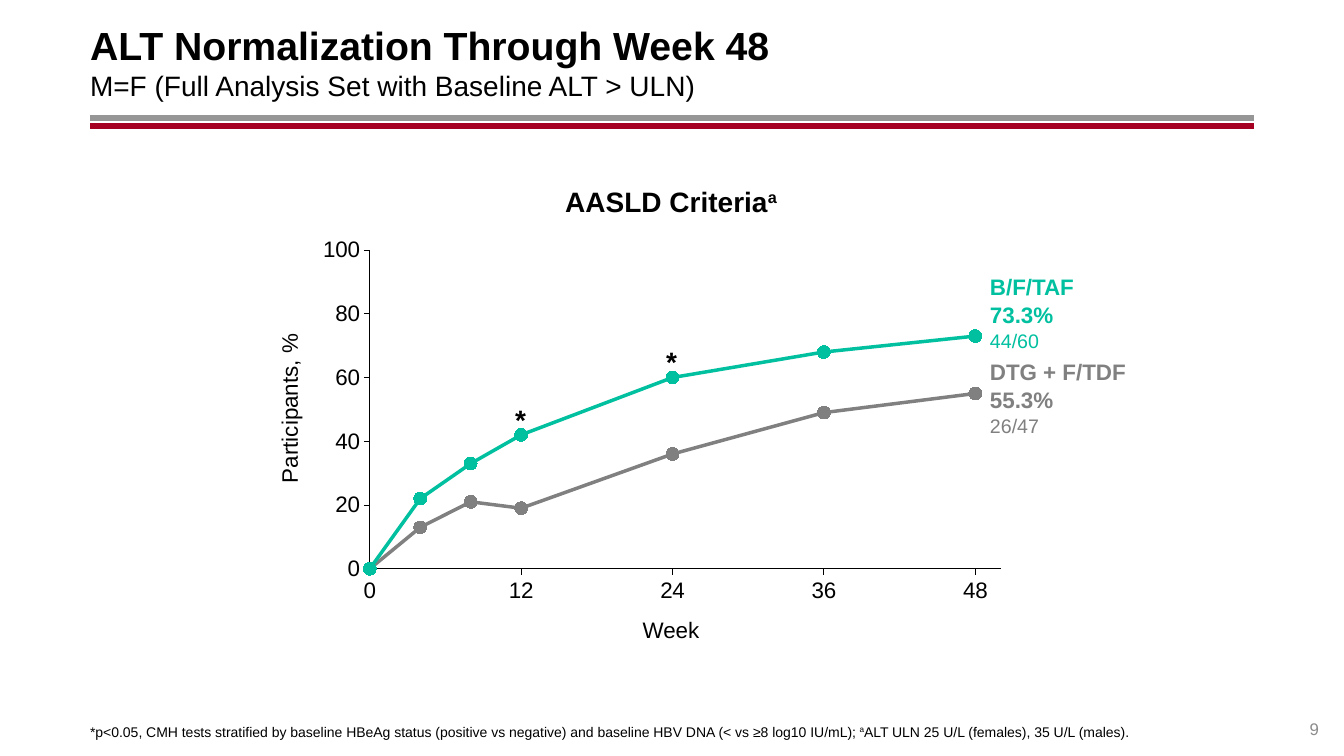
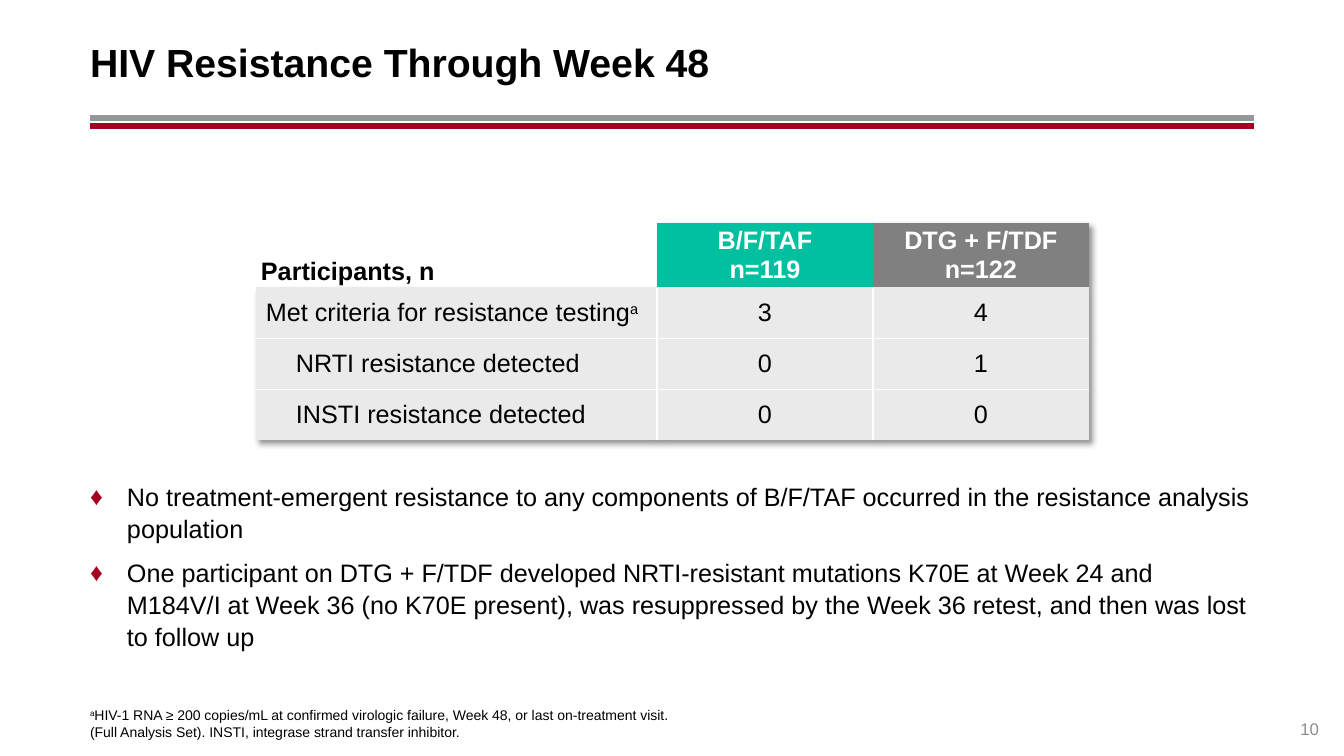
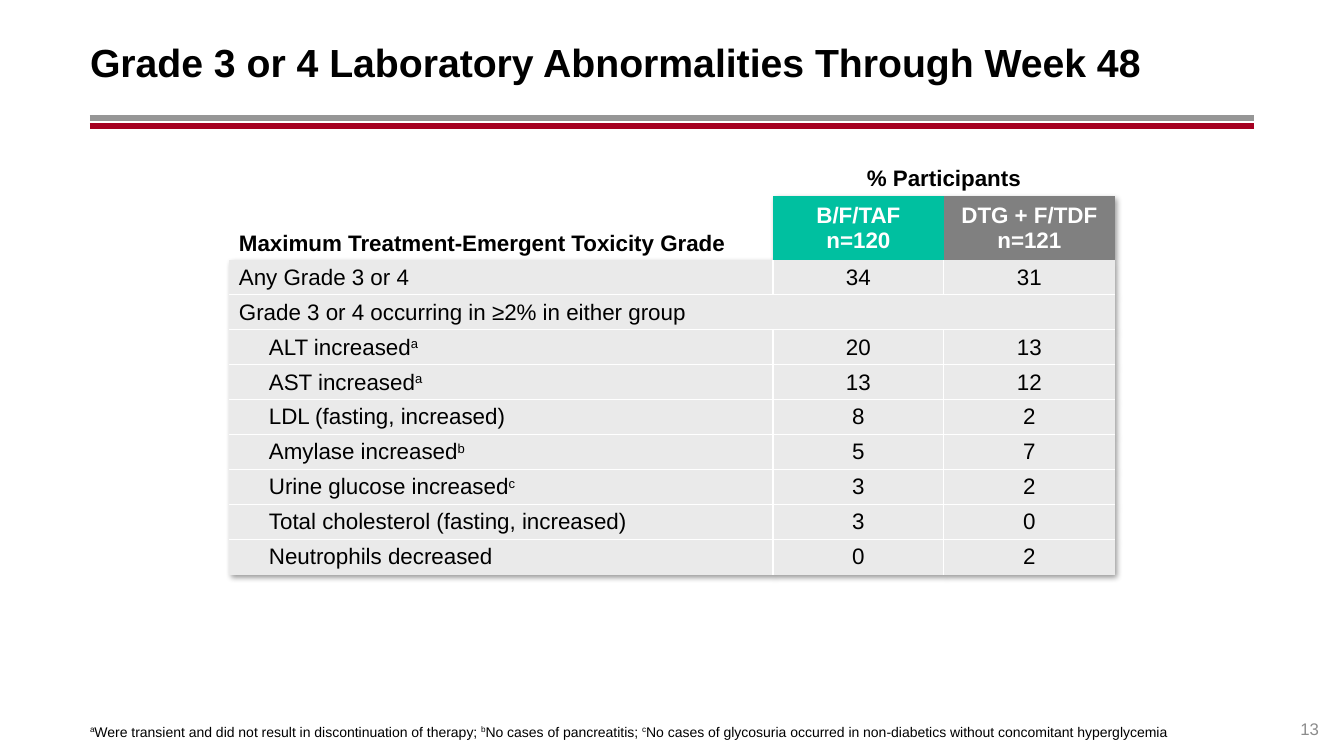
from lxml import etree
from pptx import Presentation
from pptx.chart.data import XyChartData
from pptx.dml.color import RGBColor
from pptx.enum import chart as charts, shapes, text
from pptx.oxml import parse_xml
from pptx.oxml.ns import nsdecls, qn
from pptx.util import Emu, Pt

# Scale, colours and shared places
SLIDE_WIDTH, SLIDE_HEIGHT = 1344, 756
EMU_PER_PX = 12192000 / SLIDE_WIDTH
LEFT, WIDTH = 90, 1164
TITLE_BOX = (LEFT, 18, WIDTH, 87)
FOOTNOTE_BOTTOM = 740

FONT = "Arial"
BLACK = RGBColor(0x00, 0x00, 0x00)
WHITE = RGBColor(0xFF, 0xFF, 0xFF)
RULE_GRAY = RGBColor(0x96, 0x96, 0x96)
CRIMSON = RGBColor(0xA5, 0x00, 0x21)
PAGE_GRAY = RGBColor(0x8C, 0x8C, 0x8C)
TEAL = RGBColor(0x00, 0xC0, 0xA0)
GRAY = RGBColor(0x80, 0x80, 0x80)
CELL_GRAY = RGBColor(0xEA, 0xEA, 0xEA)

ALIGN = text.PP_ALIGN
ANCHOR = text.MSO_ANCHOR


def px(length):
    return Emu(round(length * EMU_PER_PX))


def write(paragraph, content, size, color=BLACK, bold=False, align=ALIGN.LEFT):
    """Fill a paragraph; parts between ^ signs are superscript."""
    paragraph.alignment = align
    for index, part in enumerate(content.split("^")):
        if not part:
            continue
        run = paragraph.add_run()
        run.text = part
        run.font.name, run.font.size = FONT, Pt(size)
        run.font.bold, run.font.color.rgb = bold, color
        if index % 2:
            run.font._element.set("baseline", "30000")


def write_lines(text_frame, lines, **style):
    """Write one paragraph per line; a line is text or (text, own style)."""
    for index, line in enumerate(lines):
        content, own_style = (line, {}) if isinstance(line, str) else line
        paragraph = text_frame.add_paragraph() if index else text_frame.paragraphs[0]
        write(paragraph, content, **{**style, **own_style})


def add_text(slide, box, lines, anchor=ANCHOR.MIDDLE, wrap=True, **style):
    shape = slide.shapes.add_textbox(*map(px, box))
    text_frame = shape.text_frame
    text_frame.margin_left = text_frame.margin_right = 0
    text_frame.margin_top = text_frame.margin_bottom = 0
    text_frame.word_wrap = wrap
    text_frame.vertical_anchor = anchor
    write_lines(text_frame, lines, **style)
    return shape


# Title, double rule, footnote and page number
def add_frame(presentation, title, footnote, number):
    slide = presentation.slides.add_slide(presentation.slide_layouts[6])
    for y, color in ((118, RULE_GRAY), (126, CRIMSON)):
        rule = slide.shapes.add_connector(
            shapes.MSO_CONNECTOR.STRAIGHT, px(LEFT), px(y), px(LEFT + WIDTH), px(y))
        rule.line.color.rgb, rule.line.width = color, Pt(4.25)
        etree.SubElement(rule._element.spPr, qn("a:effectLst"))
    add_text(slide, TITLE_BOX, title, size=28, bold=True)
    height = 17 * len(footnote)
    add_text(slide, (LEFT, FOOTNOTE_BOTTOM - height, WIDTH, height), footnote,
             anchor=ANCHOR.BOTTOM, size=10)
    add_text(slide, (1254, 699, 65, 40), [str(number)], anchor=ANCHOR.BOTTOM,
             size=12, color=PAGE_GRAY, align=ALIGN.RIGHT)
    return slide


# Line chart over weeks
def style_axis(axis, maximum, step):
    axis.minimum_scale, axis.maximum_scale, axis.major_unit = 0, maximum, step
    axis.has_major_gridlines = axis.has_minor_gridlines = False
    axis.major_tick_mark = charts.XL_TICK_MARK.OUTSIDE
    axis.minor_tick_mark = charts.XL_TICK_MARK.NONE
    axis.tick_labels.number_format = "0"
    axis.tick_labels.number_format_is_linked = False
    font = axis.tick_labels.font
    font.name, font.size, font.color.rgb = FONT, Pt(16), BLACK
    axis.format.line.color.rgb, axis.format.line.width = BLACK, Pt(0.75)


def add_week_chart(slide, box, weeks, series_values):
    data = XyChartData()
    for name, values, _ in series_values:
        series = data.add_series(name)
        for week, value in zip(weeks, values):
            series.add_data_point(week, value)
    chart = slide.shapes.add_chart(
        charts.XL_CHART_TYPE.XY_SCATTER_LINES, *map(px, box), data).chart
    chart.has_legend = chart.has_title = False
    chart.font.name, chart.font.size, chart.font.color.rgb = FONT, Pt(10), BLACK
    style_axis(chart.category_axis, 50, 12)
    style_axis(chart.value_axis, 100, 20)
    plot = chart.plots[0]
    plot.vary_by_categories = False
    for series, (_, _, color) in zip(plot.series, series_values):
        series.smooth = False
        series.format.line.color.rgb, series.format.line.width = color, Pt(2.5)
        marker = series.marker
        marker.style, marker.size = charts.XL_MARKER_STYLE.CIRCLE, 9
        marker.format.fill.solid()
        marker.format.fill.fore_color.rgb = color
        marker.format.line.color.rgb = color

    # Fixed inner plot area
    plot_area = chart._chartSpace.chart.plotArea
    for layout in plot_area.findall(qn("c:layout")):
        plot_area.remove(layout)
    places = "".join(f'<c:{key} val="{value}"/>' for key, value in (
        ("layoutTarget", "inner"), ("xMode", "edge"), ("yMode", "edge"),
        ("x", 0.083), ("y", 0.096), ("w", 0.891), ("h", 0.745)))
    plot_area.insert(0, parse_xml(
        f'<c:layout {nsdecls("c")}><c:manualLayout>{places}</c:manualLayout></c:layout>'))


def add_chart_region(slide, box):
    left, top, width, height = box
    weeks = (0, 4, 8, 12, 24, 36, 48)
    add_week_chart(slide, box, weeks, (
        ("B/F/TAF", (0, 22, 33, 42, 60, 68, 73), TEAL),
        ("DTG + F/TDF", (0, 13, 21, 19, 36, 49, 55), GRAY)))

    # Heading, axis titles and significance marks
    centred = dict(wrap=False, align=ALIGN.CENTER)
    add_text(slide, (left + 240, top - 30, 240, 44), ["AASLD Criteria^a^"],
             size=20, bold=True, **centred)
    add_text(slide, (left + 321, top + 402, 78, 37), ["Week"], size=16, **centred)
    axis_title = add_text(slide, (left - 108, top + 181, 172, 37), ["Participants, %"],
                          size=16, **centred)
    axis_title.rotation = 270
    for x, y in ((204, 193), (355, 135)):
        add_text(slide, (left + x, top + y, 11, 34), ["*"], size=20, bold=True, **centred)

    # Labels at the line ends
    for y, color, lines in ((64, TEAL, ("B/F/TAF", "73.3%", "44/60")),
                            (149, GRAY, ("DTG + F/TDF", "55.3%", "26/47"))):
        *strong, count = lines
        label = add_text(slide, (left + 679, top + y, 138, 78),
                         [*strong, (count, dict(size=14, bold=False))],
                         wrap=False, size=16, bold=True, color=color)
        for paragraph in label.text_frame.paragraphs:
            paragraph.line_spacing = 1.05


# Tables
def set_borders(cell, sides):
    properties = cell._tc.get_or_add_tcPr()
    for side in "LRTB":
        if side in sides:
            properties.append(parse_xml(
                f'<a:ln{side} {nsdecls("a")} w="12700"><a:solidFill>'
                f'<a:srgbClr val="{WHITE}"/></a:solidFill></a:ln{side}>'))


def fill_cell(cell, lines, margins, fill=None, anchor=ANCHOR.MIDDLE, **style):
    side, vertical = margins
    cell.margin_left = cell.margin_right = px(side)
    cell.margin_top = cell.margin_bottom = px(vertical if lines else 0)
    cell.vertical_anchor = anchor
    if fill is None:
        cell.fill.background()
    else:
        cell.fill.solid()
        cell.fill.fore_color.rgb = fill
    write_lines(cell.text_frame, lines, **style)


def add_result_table(slide, origin, widths, heights, header, rows, size,
                     margins, header_margins, overhead=None):
    """Rows are (label, indented, values); a row without values spans the table."""
    box = (*origin, sum(widths), sum(heights))
    table = slide.shapes.add_table(len(heights), len(widths), *map(px, box)).table
    table.first_row = table.horz_banding = False
    properties = table._tbl.tblPr
    for style_id in properties.findall(qn("a:tableStyleId")):
        style_id.text = "{2D5ABB26-0587-4C30-8999-92F81FD0307C}"
    properties.insert(0, parse_xml(
        f'<a:effectLst {nsdecls("a")}><a:outerShdw blurRad="50800" dist="38100" '
        'dir="2700000" algn="tl" rotWithShape="0"><a:srgbClr val="000000">'
        '<a:alpha val="40000"/></a:srgbClr></a:outerShdw></a:effectLst>'))
    for column, width in zip(table.columns, widths):
        column.width = px(width)
    for row, height in zip(table.rows, heights):
        row.height = px(height)
    last_column, last_row = len(widths) - 1, len(heights) - 1

    # Heading rows
    header_row = 0
    bold = dict(size=size, bold=True)
    if overhead:
        header_row = 1
        table.cell(0, 1).merge(table.cell(0, last_column))
        for index, lines in enumerate(([], [overhead], [])):
            fill_cell(table.cell(0, index), lines, margins,
                      align=ALIGN.CENTER, **bold)
    label, *groups = header
    fill_cell(table.cell(header_row, 0), [label], header_margins,
              anchor=ANCHOR.BOTTOM, **bold)
    for index, (lines, fill) in enumerate(zip(groups, (TEAL, GRAY)), 1):
        fill_cell(table.cell(header_row, index), lines, header_margins, fill,
                  color=WHITE, align=ALIGN.CENTER, **bold)

    # Result rows
    first_row = header_row + 1
    for row_index, (label, indented, values) in enumerate(rows, first_row):
        if not values:
            table.cell(row_index, 0).merge(table.cell(row_index, last_column))
        contents = [[label]] + ([[str(value)] for value in values] or [[]] * last_column)
        for index, lines in enumerate(contents):
            cell = table.cell(row_index, index)
            inner_sides = (("L", index > 0 and values),
                           ("R", index < last_column and values),
                           ("T", row_index > first_row), ("B", row_index < last_row))
            set_borders(cell, [side for side, inner in inner_sides if inner])
            fill_cell(cell, lines, margins, CELL_GRAY, size=size,
                      align=ALIGN.CENTER if index else ALIGN.LEFT)
        if indented:
            paragraph = table.cell(row_index, 0).text_frame.paragraphs[0]
            paragraph._p.get_or_add_pPr().set("marL", str(px(30)))


# Bulleted findings
def add_bullets(slide, box, items):
    shape = add_text(slide, box, items, anchor=ANCHOR.TOP, size=18)
    for paragraph in shape.text_frame.paragraphs:
        paragraph.space_before = Pt(9)
        paragraph.line_spacing = 1.05
        properties = paragraph._p.get_or_add_pPr()
        properties.set("marL", str(px(37)))
        properties.set("indent", str(px(-37)))
        color = etree.SubElement(properties, qn("a:buClr"))
        etree.SubElement(color, qn("a:srgbClr")).set("val", str(CRIMSON))
        etree.SubElement(properties, qn("a:buFont")).set("typeface", FONT)
        etree.SubElement(properties, qn("a:buChar")).set("char", "♦")


# Slides
def build_normalization_slide(presentation):
    slide = add_frame(
        presentation,
        ["ALT Normalization Through Week 48",
         ("M=F\u00a0(Full Analysis Set with Baseline ALT > ULN)", dict(size=20, bold=False))],
        ["*p<0.05, CMH tests stratified by baseline HBeAg status (positive vs negative) "
         "and baseline HBV DNA (< vs ≥8 log10 IU/mL); "
         "^a^ALT ULN 25 U/L (females), 35 U/L (males)."], 9)
    add_chart_region(slide, (311, 209, 708, 428))


def build_resistance_slide(presentation):
    slide = add_frame(
        presentation, ["HIV Resistance Through Week 48"],
        ["^a^HIV-1 RNA ≥ 200 copies/mL at confirmed virologic failure, Week 48, "
         "or last on-treatment visit.",
         "(Full Analysis Set). INSTI, integrase strand\u00a0transfer inhibitor."], 10)
    add_result_table(
        slide, (256, 223), (401, 216, 216), (62, 51, 51, 51),
        ("Participants, n", ("B/F/TAF", "n=119"), ("DTG + F/TDF", "n=122")),
        (("Met criteria for resistance testing^a^", False, (3, 4)),
         ("NRTI resistance detected", True, (0, 1)),
         ("INSTI resistance detected", True, (0, 0))),
        size=18, margins=(10, 5), header_margins=(5, 2))
    add_bullets(slide, (LEFT, 480, WIDTH, 165), [
        "No treatment-emergent resistance to any components of B/F/TAF occurred "
        "in the resistance analysis population",
        "One participant on DTG + F/TDF developed NRTI-resistant mutations K70E at "
        "Week 24 and M184V/I at Week 36 (no K70E present), was resuppressed by the "
        "Week 36 retest, and then was lost to follow up"])


def build_laboratory_slide(presentation):
    slide = add_frame(
        presentation, ["Grade 3 or 4 Laboratory Abnormalities Through Week 48"],
        ["^a^Were transient and did not result in discontinuation of therapy; "
         "^b^No cases of pancreatitis; ^c^No cases of glycosuria occurred in "
         "non-diabetics without concomitant hyperglycemia"], 13)
    rows = (
        ("Any Grade 3 or 4", False, (34, 31)),
        ("Grade 3 or 4 occurring in ≥2% in either group", False, ()),
        ("ALT increased^a^", True, (20, 13)),
        ("AST increased^a^", True, (13, 12)),
        ("LDL (fasting, increased)", True, (8, 2)),
        ("Amylase increased^b^", True, (5, 7)),
        ("Urine glucose increased^c^", True, (3, 2)),
        ("Total cholesterol (fasting, increased)", True, (3, 0)),
        ("Neutrophils decreased", True, (0, 2)))
    add_result_table(
        slide, (229, 161), (544, 171, 171), (35, 64, *[35] * len(rows)),
        ("Maximum Treatment-Emergent Toxicity Grade",
         ("B/F/TAF", "n=120"), ("DTG + F/TDF", "n=121")),
        rows, size=16, margins=(10, 4), header_margins=(10, 4),
        overhead="% Participants")


def main():
    presentation = Presentation()
    presentation.slide_width = px(SLIDE_WIDTH)
    presentation.slide_height = px(SLIDE_HEIGHT)
    build_normalization_slide(presentation)
    build_resistance_slide(presentation)
    build_laboratory_slide(presentation)
    presentation.save("out.pptx")


if __name__ == "__main__":
    main()
